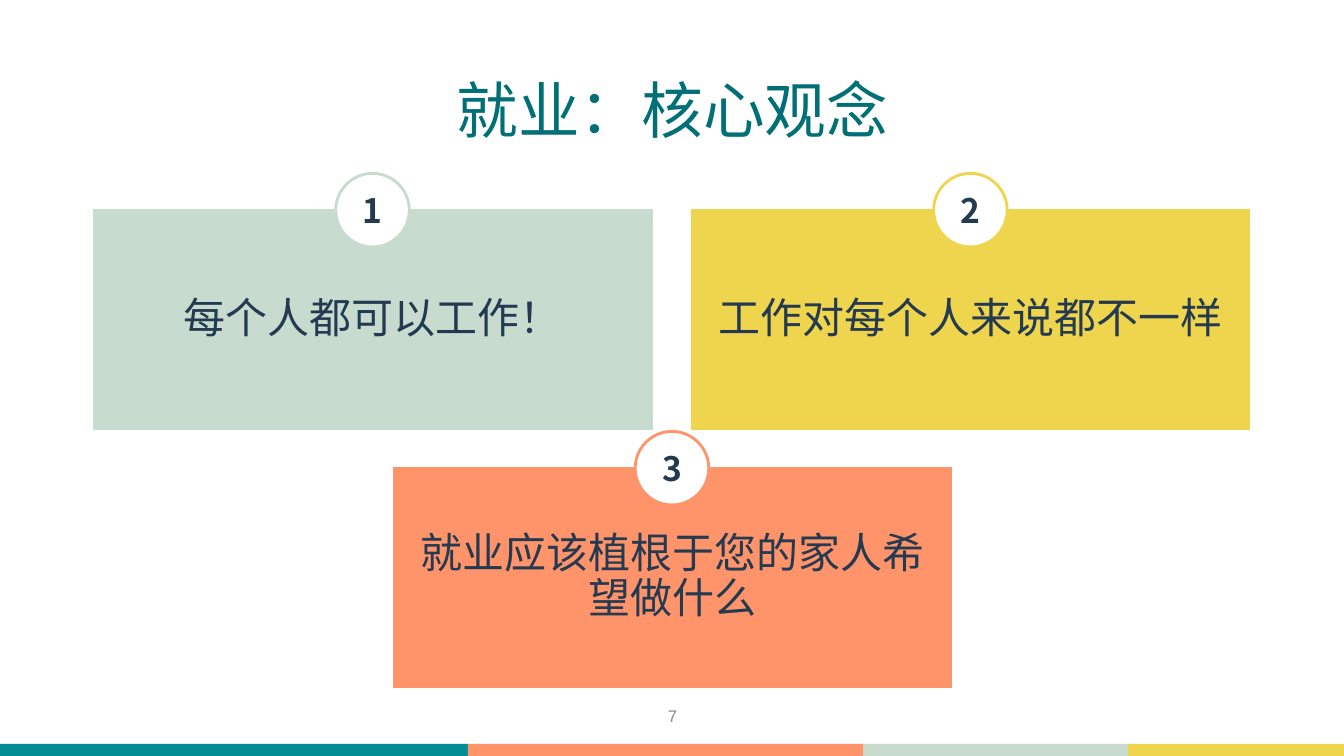
"""Build the slide on core ideas about employment."""
from dataclasses import dataclass

from lxml.etree import SubElement
from pptx import Presentation
from pptx.dml.color import RGBColor
from pptx.enum.shapes import MSO_SHAPE
from pptx.enum.text import MSO_ANCHOR, PP_ALIGN
from pptx.oxml.ns import qn
from pptx.shapes.autoshape import Shape
from pptx.slide import Slide
from pptx.util import Emu, Pt

SCALE = 9144
HAN = "Noto Sans CJK SC"
HUES = {
    "white": "FFFFFF", "teal": "028D94", "title": "017076", "mint": "C7DCCF",
    "coral": "FF946B", "gold": "EFD54E", "navy": "243A50", "gray": "8C8C8C",
}
CARD_W, CARD_H = 556, 220
BADGE = 73
RISE = 35


@dataclass(frozen=True)
class Box:
    left: int
    top: int
    width: int
    height: int


@dataclass(frozen=True)
class Style:
    size: int
    hue: str
    face: str = HAN
    bold: bool = False
    lines: float = 1.0
    after: float = 0
    inset: int = 0


@dataclass(frozen=True)
class Card:
    left: int
    top: int
    hue: str
    words: str


@dataclass(frozen=True)
class Band:
    left: int
    width: int
    height: int
    hue: str


TITLE = Style(44, "title", lines=0.9, inset=10)
BODY = Style(30, "navy", lines=0.9, after=10.5, inset=12)
COUNT = Style(24, "navy", bold=True)
FOOT = Style(12, "gray", face="Arial")

CARDS = [
    Card(92, 207, "mint", "每个人都可以工作！"),
    Card(685, 207, "gold", "工作对每个人来说都不一样"),
    Card(389, 463, "coral", "就业应该植根于您的家人希望做什么"),
]
BANDS = [
    Band(0, 464, 13, "teal"),
    Band(856, 266, 14, "mint"),
    Band(464, 392, 14, "coral"),
    Band(1119, 214, 14, "gold"),
]


def px(count: int) -> Emu:
    return Emu(count * SCALE)


def color(hue: str) -> RGBColor:
    return RGBColor.from_string(HUES[hue])


def place(box: Box) -> tuple[Emu, ...]:
    return px(box.left), px(box.top), px(box.width), px(box.height)


def write(shape: Shape, words: str, style: Style) -> None:
    frame = shape.text_frame
    frame.text = words
    frame.word_wrap = True
    frame.vertical_anchor = MSO_ANCHOR.MIDDLE
    frame.margin_left = frame.margin_right = px(style.inset)
    frame.margin_top = frame.margin_bottom = px(style.inset)
    para = frame.paragraphs[0]
    para.alignment = PP_ALIGN.CENTER
    para.line_spacing = style.lines
    para.space_after = Pt(style.after)
    run = para.runs[0]
    run.font.size = Pt(style.size)
    run.font.bold = style.bold
    run.font.color.rgb = color(style.hue)
    run.font.name = style.face
    SubElement(run.font._element, qn("a:ea"), typeface=style.face)


def label(slide: Slide, box: Box, words: str, style: Style) -> None:
    write(slide.shapes.add_textbox(*place(box)), words, style)


def draw(slide: Slide, kind: MSO_SHAPE, box: Box, fill: str,
         edge: str = "", weight: int = 0) -> Shape:
    shape = slide.shapes.add_shape(kind, *place(box))
    shape.shadow.inherit = False
    shape.fill.solid()
    shape.fill.fore_color.rgb = color(fill)
    if edge:
        shape.line.color.rgb = color(edge)
        shape.line.width = Pt(weight)
    else:
        shape.line.fill.background()
    return shape


def main() -> None:
    deck = Presentation()
    deck.slide_width, deck.slide_height = px(1333), px(750)
    slide = deck.slides.add_slide(deck.slide_layouts[6])

    for band in BANDS:
        box = Box(band.left, 738, band.width, band.height)
        draw(slide, MSO_SHAPE.RECTANGLE, box, band.hue)
    label(slide, Box(517, 690, 300, 40), "7", FOOT)
    label(slide, Box(92, 40, 1150, 145), "就业：核心观念", TITLE)

    for card in CARDS:
        box = Box(card.left, card.top, CARD_W, CARD_H)
        panel = draw(slide, MSO_SHAPE.RECTANGLE, box, card.hue, "white", 1)
        write(panel, card.words, BODY)
    for count, card in enumerate(CARDS, 1):
        left = card.left + (CARD_W - BADGE) // 2
        box = Box(left, card.top - RISE, BADGE, BADGE)
        badge = draw(slide, MSO_SHAPE.OVAL, box, "white", card.hue, 2)
        write(badge, str(count), COUNT)

    deck.save("out.pptx")


if __name__ == "__main__":
    main()
